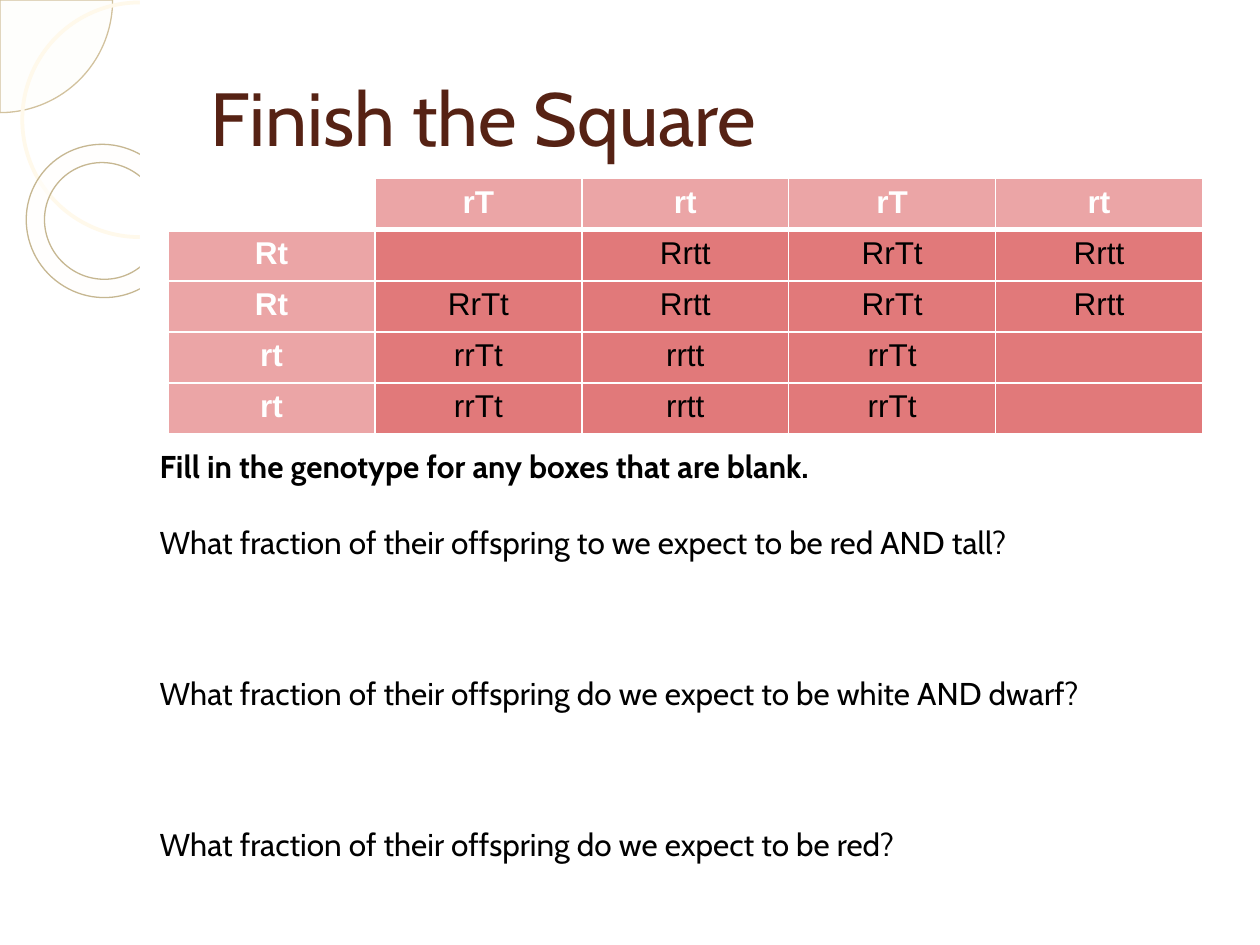
from lxml.etree import SubElement
from pptx import Presentation
from pptx.dml.color import RGBColor
from pptx.enum.shapes import MSO_SHAPE as SHAPE
from pptx.enum.text import MSO_ANCHOR as ANCHOR, MSO_AUTO_SIZE as AUTO, PP_ALIGN as ALIGN
from pptx.oxml.ns import qn
from pptx.util import Cm, Pt

COLORS = {k: RGBColor.from_string(v) for k, v in {
    "white": "FFFFFF", "black": "000000", "title": "562214",
    "header": "EBA5A6", "cell": "E1797A",
    "pie": "FEFCF8", "pie_line": "D2C29E", "circle_line": "FFF9EB",
    "ring": "FFFEFC", "ring_line": "C6B791"}.items()}


def add_decoration(kind, left, top, width, height, fill=None, alpha=100, line=None, weight=0.75):
    sp = s.shapes.add_shape(kind, Cm(left), Cm(top), Cm(width), Cm(height))
    sp.shadow.inherit = False
    if fill:
        sp.fill.solid()
        sp.fill.fore_color.rgb = COLORS[fill]
        color = sp.fill._xPr.find(qn("a:solidFill"))[0]
        SubElement(color, qn("a:alpha"), val=str(alpha * 1000))
    else:
        sp.fill.background()
    if line:
        sp.line.color.rgb = COLORS[line]
        sp.line.width = Pt(weight)
    else:
        sp.line.fill.background()
    return sp


def set_font(p, name, size, color, bold=False):
    p.font.name, p.font.size, p.font.bold = name, Pt(size), bold
    p.font.color.rgb = COLORS[color]


prs = Presentation()
prs.slide_width, prs.slide_height = Cm(25.4), Cm(19.05)
s = prs.slides.add_slide(prs.slide_layouts[5])

# Corner decoration, cut off by the white content panel
pie = add_decoration(SHAPE.PIE, -2.27, -2.27, 4.54, 4.54, "pie", 33, "pie_line")
pie.adjustments[0], pie.adjustments[1] = 0, 54
add_decoration(SHAPE.OVAL, 0.45, 0.05, 4.73, 4.73, line="circle_line", weight=2.15)
ring = add_decoration(SHAPE.DONUT, 0.52, 2.92, 3.12, 3.07, "ring", 60, "ring_line")
ring.adjustments[0] = 0.12
ring.rotation = 38.6
add_decoration(SHAPE.RECTANGLE, 2.82, 0, 22.58, 19.05, "white")

# Title, brought in front of the panel
title = s.shapes.title
title._element.getparent().append(title._element)
title.left, title.top, title.width, title.height = Cm(3.99), Cm(0.76), Cm(20.83), Cm(3.18)
tf = title.text_frame
tf.text = "Finish the Square"
tf.auto_size, tf.vertical_anchor = AUTO.NONE, ANCHOR.MIDDLE
tf.paragraphs[0].alignment = ALIGN.LEFT
set_font(tf.paragraphs[0], "Cabin", 43, "title")

# Punnett square
square = [
    ["", "rT", "rt", "rT", "rt"],
    ["Rt", "", "Rrtt", "RrTt", "Rrtt"],
    ["Rt", "RrTt", "Rrtt", "RrTt", "Rrtt"],
    ["rt", "rrTt", "rrtt", "rrTt", ""],
    ["rt", "rrTt", "rrtt", "rrTt", ""],
]
size = len(square)
table = s.shapes.add_table(size, size, Cm(3.39), Cm(3.6), Cm(4.17 * size), Cm(1.03 * size)).table
for i, row in enumerate(square):
    for j, text in enumerate(row):
        cell = table.cell(i, j)
        cell.text = text
        p = cell.text_frame.paragraphs[0]
        p.alignment = ALIGN.CENTER
        header = i == 0 or j == 0
        set_font(p, "Arial", 18, "white" if header else "black", header)

        # White borders, thicker under the header row
        tcPr = cell._tc.get_or_add_tcPr()
        for side in "LRTB":
            thick = (i == 0 and side == "B") or (i == 1 and side == "T")
            ln = SubElement(tcPr, qn(f"a:ln{side}"), w=str(Pt(3 if thick else 1)))
            SubElement(SubElement(ln, qn("a:solidFill")), qn("a:srgbClr"), val=str(COLORS["white"]))
        cell.fill.solid()
        fill = "white" if i == j == 0 else "header" if header else "cell"
        cell.fill.fore_color.rgb = COLORS[fill]

# Task and questions, with room for the answers
tasks = [
    ("Fill in the genotype for any boxes that are blank.", 0),
    ("What fraction of their offspring to we expect to be red AND tall?", 21.6),
    ("What fraction of their offspring do we expect to be white AND dwarf?", 64.8),
    ("What fraction of their offspring do we expect to be red?", 64.8),
]
tf = s.shapes.add_textbox(Cm(2.97), Cm(8.89), Cm(22.43), Cm(9.5)).text_frame
tf.word_wrap = True
for i, (text, gap) in enumerate(tasks):
    p = tf.add_paragraph() if i else tf.paragraphs[0]
    p.text = text
    p.space_before = Pt(gap)
    set_font(p, "Cabin", 18, "black", i == 0)

prs.save("out.pptx")
